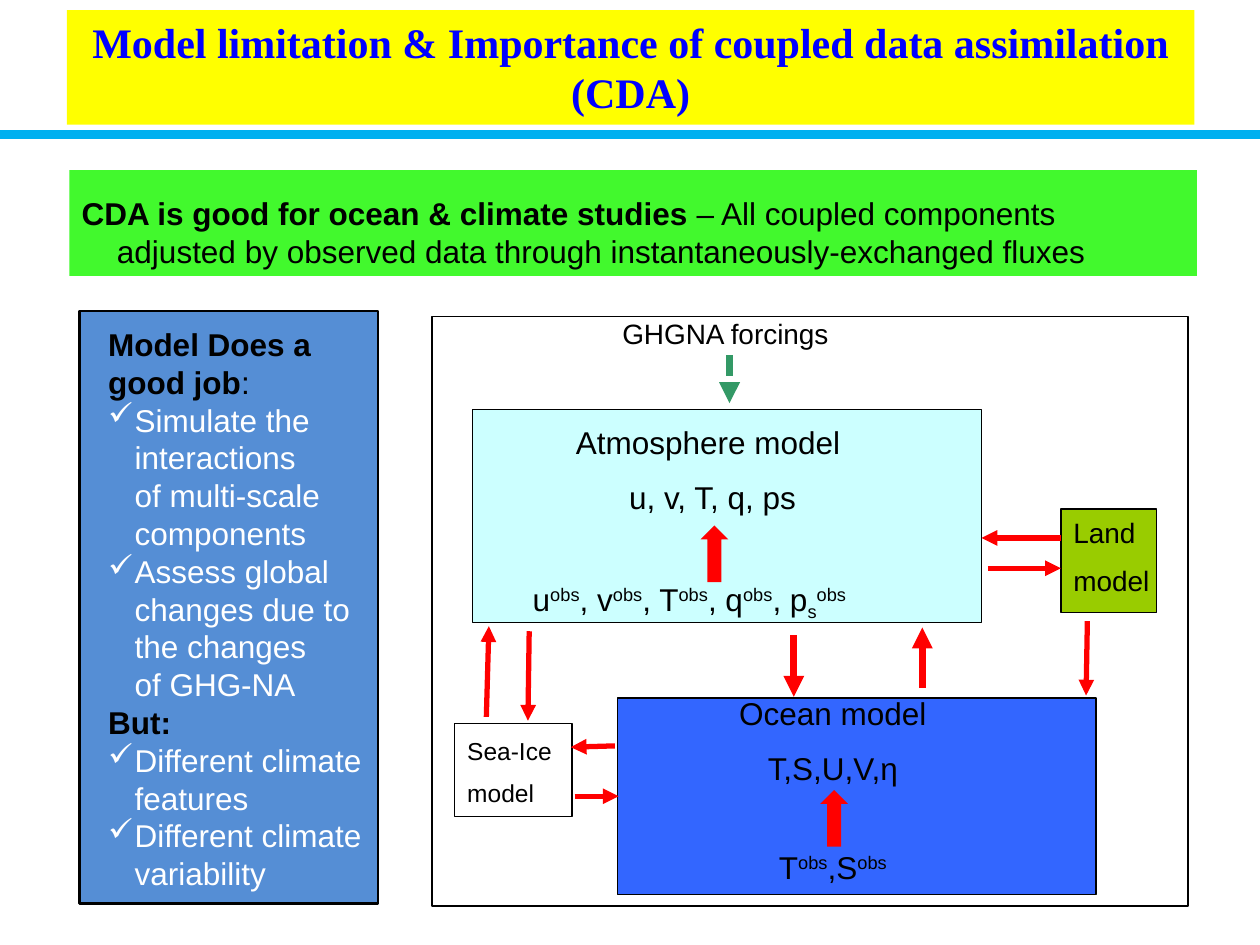
from dataclasses import dataclass

from lxml import etree
from pptx import Presentation
from pptx.dml.color import RGBColor
from pptx.enum.dml import MSO_LINE
from pptx.enum.shapes import MSO_CONNECTOR, MSO_SHAPE
from pptx.enum.text import MSO_ANCHOR, PP_ALIGN
from pptx.oxml.ns import qn
from pptx.util import Inches, Pt

RECTANGLE, UP_ARROW = MSO_SHAPE.RECTANGLE, MSO_SHAPE.UP_ARROW
STRAIGHT = MSO_CONNECTOR.STRAIGHT
DOTTED = MSO_LINE.SQUARE_DOT
TOP, BOTTOM = MSO_ANCHOR.TOP, MSO_ANCHOR.BOTTOM
LEFT, CENTER = PP_ALIGN.LEFT, PP_ALIGN.CENTER

COLUMNS, ROWS = 100, 75
BLANK_LAYOUT = 6


@dataclass(frozen=True)
class Theme:
    black: str = "000000"
    white: str = "FFFFFF"
    title_fill: str = "FFFF00"
    title_text: str = "0000FF"
    rule: str = "00B0F0"
    message: str = "42F92D"
    findings: str = "558ED5"
    atmosphere: str = "CCFFFF"
    ocean: str = "3366FF"
    land: str = "99CC00"
    flux: str = "FF0000"
    forcing: str = "339966"
    heading_font: str = "Times New Roman"
    body_font: str = "Arial"
    heading: int = 24
    body: int = 18
    label: int = 16
    small: int = 14
    gap: float = 0.54      # space between paragraphs, as a share of the type size
    hanging: float = 0.21  # inches


class SlideBuilder:
    """Places elements on a grid of COLUMNS by ROWS cells."""

    def __init__(self, presentation, theme):
        self.theme = theme
        self.slide = presentation.slides.add_slide(
            presentation.slide_layouts[BLANK_LAYOUT])
        self.column = presentation.slide_width / COLUMNS
        self.row = presentation.slide_height / ROWS

    def place(self, across, down, *size):
        """Turn grid positions, with or without a size, into lengths."""
        units = (self.column, self.row) * 2
        return [round(value * unit)
                for value, unit in zip((across, down, *size), units)]

    def shape(self, box, fill, border=0, kind=RECTANGLE):
        shape = self.slide.shapes.add_shape(kind, *self.place(*box))
        shape.shadow.inherit = False
        shape.fill.solid()
        shape.fill.fore_color.rgb = RGBColor.from_string(fill)
        if border:
            shape.line.color.rgb = RGBColor.from_string(self.theme.black)
            shape.line.width = Pt(border)
        else:
            shape.line.fill.background()
        return shape

    def text(self, box, paragraphs, **style):
        textbox = self.slide.shapes.add_textbox(*self.place(*box))
        self.fill_text(textbox, paragraphs, **style)

    def fill_text(self, shape, paragraphs, align=LEFT, anchor=TOP, spaced=False, **font):
        """Fill a shape; each paragraph is a string or a list of (text, format) runs."""
        frame = shape.text_frame
        frame.word_wrap = True
        frame.vertical_anchor = anchor
        font = {"name": self.theme.body_font, "size": self.theme.body,
                "color": self.theme.black, **font}
        for index, runs in enumerate(paragraphs):
            paragraph = frame.add_paragraph() if index else frame.paragraphs[0]
            paragraph.alignment = align
            if spaced and index:
                paragraph.space_before = Pt(font["size"] * self.theme.gap)
            if isinstance(runs, str):
                runs = [(runs, {})]
            for content, changes in runs:
                self.add_text_run(paragraph, content, {**font, **changes})

    def add_text_run(self, paragraph, content, values):
        for index, line in enumerate(content.split("\n")):
            if index:
                paragraph.add_line_break()
            run = paragraph.add_run()
            run.text = line
            for key, value in values.items():
                if key == "color":
                    run.font.color.rgb = RGBColor.from_string(value)
                elif key == "baseline":
                    run._r.get_or_add_rPr().set("baseline", str(value * 1000))
                elif key == "indent":
                    paragraph._p.get_or_add_pPr().set("marL", str(Inches(value)))
                elif key == "bullet":
                    if not index:
                        self.bullet(paragraph, value)
                elif key == "size":
                    run.font.size = Pt(value)
                elif key == "name":
                    run.font.name = value
                elif key == "bold":
                    run.font.bold = value

    def bullet(self, paragraph, mark):
        properties = paragraph._p.get_or_add_pPr()
        hanging = Inches(self.theme.hanging)
        properties.set("marL", str(hanging))
        properties.set("indent", str(-hanging))
        etree.SubElement(properties, qn("a:buChar")).set("char", mark)

    def line(self, start, end, color, width, arrow=True, dash=None):
        connector = self.slide.shapes.add_connector(
            STRAIGHT, *self.place(*start), *self.place(*end))
        connector.line.color.rgb = RGBColor.from_string(color)
        connector.line.width = Pt(width)
        if dash:
            connector.line.dash_style = dash
        properties = connector._element.spPr
        if arrow:
            outline = properties.find(qn("a:ln"))
            etree.SubElement(outline, qn("a:tailEnd")).set("type", "triangle")
        etree.SubElement(properties, qn("a:effectLst"))


def observed(*variables):
    """Runs for variables that carry the superscript 'obs'."""
    return [run for name in variables
            for run in ((name, {}), ("obs", {"baseline": 30}))]


def add_header(builder, theme):
    title = builder.shape((5.3, 0.8, 89.5, 9.1), theme.title_fill)
    builder.fill_text(
        title, ["Model limitation & Importance of coupled data assimilation (CDA)"],
        align=CENTER, name=theme.heading_font, size=theme.heading,
        color=theme.title_text, bold=True)
    builder.line((0, 10.7), (COLUMNS, 10.7), theme.rule, 5, arrow=False)
    message = builder.shape((5.5, 13.5, 89.5, 8.4), theme.message)
    builder.fill_text(message, [
        [("CDA is good for ocean & climate studies ", {"bold": True}),
         ("– All coupled components", {})],
        [("adjusted by observed data through instantaneously-exchanged fluxes",
          {"indent": 0.28})],
    ], anchor=BOTTOM)


def add_findings(builder, theme):
    def check(content):
        return [(content, {"color": theme.white, "bullet": "✓"})]

    builder.shape((6.3, 24.7, 23.7, 47), theme.findings, border=1.5)
    builder.text((7.6, 25.3, 23.5, 46.4), [
        [("Model Does a good job", {"bold": True}), (":", {})],
        check("Simulate the\ninteractions\nof multi-scale\ncomponents"),
        check("Assess global\nchanges due to\nthe changes\nof GHG-NA"),
        [("But:", {"bold": True})],
        check("Different climate\nfeatures"),
        check("Different climate\nvariability"),
    ])


def add_coupled_model(builder, theme):
    for box, fill in (
        ((34.3, 25.1, 60, 46.8), theme.white),
        ((37.5, 32.5, 40.4, 16.9), theme.atmosphere),
        ((49, 55.4, 38, 15.6), theme.ocean),
        ((84.2, 40.4, 7.6, 8.2), theme.land),
        ((36.1, 57.4, 9.3, 7.4), theme.white),
    ):
        builder.shape(box, fill, border=0.75)

    for box, paragraphs, align, size in (
        ((48.4, 24.6, 19.2, 3.7), ["GHGNA forcings"], LEFT, theme.label),
        ((41.9, 33.1, 29.3, 8.6), ["Atmosphere model ", "u, v, T, q, ps"], CENTER, theme.body),
        ((56.9, 54.6, 18.4, 8.6), ["Ocean model", "T,S,U,V,η"], CENTER, theme.body),
        ((36.1, 57.9, 9.3, 6.9), ["Sea-Ice", "model"], LEFT, theme.small),
        ((84.2, 40.4, 8.7, 7.7), ["Land", "model"], LEFT, theme.label),
        ((59.5, 66.8, 13.2, 4), [observed("T", ",S")], CENTER, theme.body),
        ((41.3, 45.5, 34.4, 5.1),
         [observed("u", ", v", ", T", ", q")
          + [(", p", {}), ("s", {"baseline": -25}), ("obs", {"baseline": 30})]],
         LEFT, theme.body),
    ):
        builder.text(box, paragraphs, align=align, size=size, spaced=True)

    builder.line((57.9, 28.2), (57.9, 32), theme.forcing, 4, dash=DOTTED)
    for start, end, width in (
        ((38.6, 56.9), (38.8, 49.7), 3),  # sea ice to atmosphere
        ((42, 50.1), (41.9, 57.2), 3),    # atmosphere to sea ice
        ((45.6, 63.2), (49.1, 63.2), 3),  # sea ice to ocean
        ((48.8, 59.2), (45.3, 59.3), 3),  # ocean to sea ice
        ((63, 50.4), (63, 55.3), 4),      # atmosphere to ocean
        ((73.2, 54.6), (73.2, 49.8), 4),  # ocean to atmosphere
        ((84.2, 42.7), (77.9, 42.7), 3),  # land to atmosphere
        ((78.4, 45.1), (84.2, 45.1), 3),  # atmosphere to land
        ((86.3, 49.3), (86.2, 55.2), 3),  # land to ocean
    ):
        builder.line(start, end, theme.flux, width)
    for corner in ((55.6, 41.7), (65.1, 62.7)):
        builder.shape((*corner, 2.2, 4.5), theme.flux, kind=UP_ARROW)


def main():
    presentation = Presentation()
    presentation.slide_width, presentation.slide_height = Inches(10), Inches(7.5)
    theme = Theme()
    builder = SlideBuilder(presentation, theme)
    for add_part in (add_header, add_findings, add_coupled_model):
        add_part(builder, theme)
    presentation.save("out.pptx")


if __name__ == "__main__":
    main()
